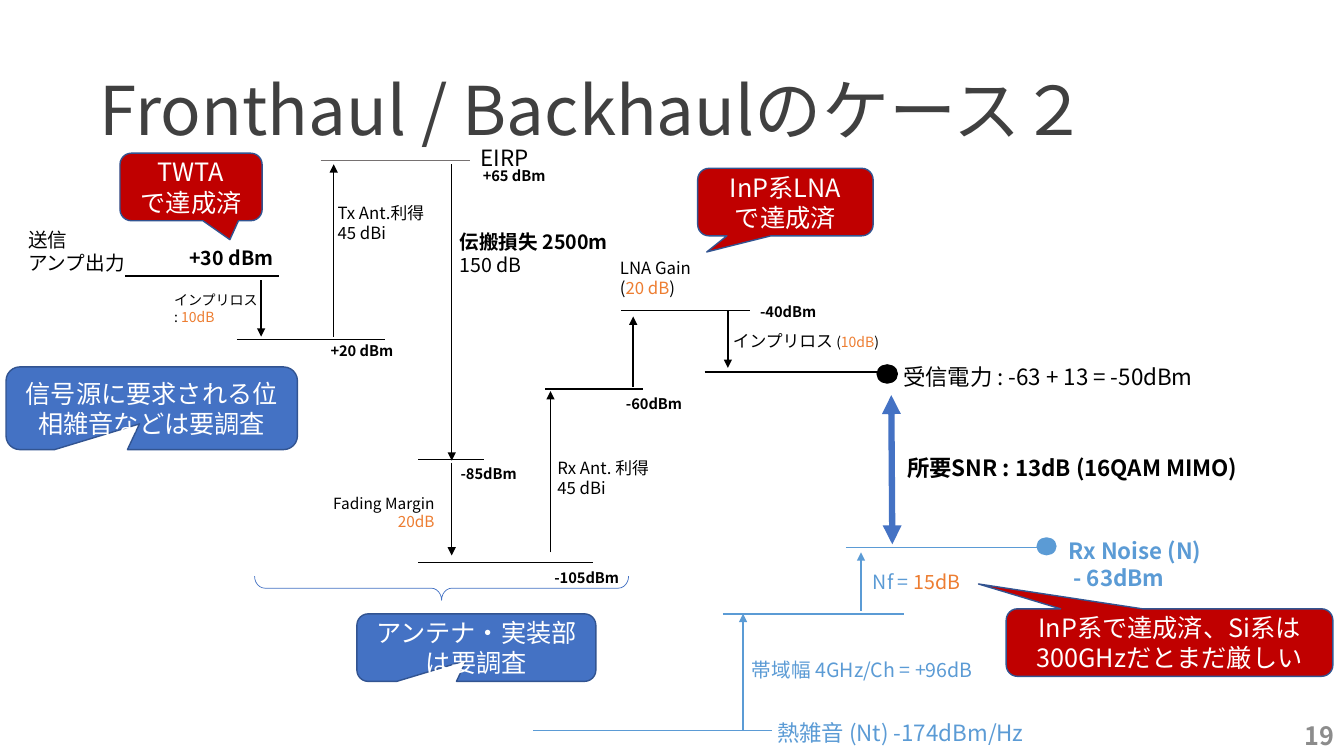
from dataclasses import dataclass
from lxml.etree import SubElement
from pptx import Presentation
from pptx.dml.color import RGBColor
from pptx.enum.shapes import MSO_CONNECTOR, MSO_SHAPE
from pptx.enum.text import MSO_ANCHOR, MSO_AUTO_SIZE, PP_ALIGN
from pptx.oxml.ns import qn
from pptx.util import Cm, Pt


@dataclass(frozen=True)
class Theme:
    font: str = "Noto Sans CJK JP"
    black: str = "000000"
    white: str = "FFFFFF"
    dark: str = "404040"
    grey: str = "767171"
    pale: str = "8C8C8C"
    red: str = "C00000"
    blue: str = "4472C4"
    edge: str = "325491"
    sky: str = "5B9BD5"
    orange: str = "ED7D31"
    title: float = 48
    large: float = 18
    main: float = 16
    body: float = 14
    note: float = 12
    fade: float = 11
    level: float = 10.5
    tiny: float = 10


T = Theme()


def cm(*vals):
    """Turn inches into lengths."""
    return [Cm(val * 2.54) for val in vals]


def rgb(code):
    return RGBColor.from_string(code)


def write(frame, paras, align=PP_ALIGN.LEFT, anchor=MSO_ANCHOR.TOP, space=None, **form):
    """Fill a frame; a paragraph is a string or a list of (text, format) runs."""
    frame.word_wrap = True
    frame.vertical_anchor = anchor
    for i, runs in enumerate(paras):
        para = frame.paragraphs[0] if i == 0 else frame.add_paragraph()
        para.alignment = align
        if space:
            para.line_spacing = space
        for text, extra in [(runs, {})] if isinstance(runs, str) else runs:
            look = {"size": T.body, "color": T.black, "bold": False, **form, **extra}
            run = para.add_run()
            run.text = text
            run.font.size = Pt(look["size"])
            run.font.bold = look["bold"]
            run.font.color.rgb = rgb(look["color"])
            run.font.name = T.font
            SubElement(run.font._element, qn("a:ea"), typeface=T.font)


class Board:
    """Holds the theme and the current slide."""

    def __init__(self, deck, theme):
        self.theme = theme
        self.slide = deck.slides.add_slide(deck.slide_layouts[5])

    def title(self, text, box):
        head = self.slide.shapes.title
        head.left, head.top, head.width, head.height = cm(*box)
        frame = head.text_frame
        frame.auto_size = MSO_AUTO_SIZE.NONE
        frame.margin_left, frame.margin_top, frame.margin_right, frame.margin_bottom = cm(
            0.07, 0, 0.07, 0)
        write(frame, [text], anchor=MSO_ANCHOR.MIDDLE, space=0.9,
              size=self.theme.title, color=self.theme.dark)

    def label(self, box, *paras, **form):
        area = self.slide.shapes.add_textbox(*cm(*box))
        write(area.text_frame, paras, **form)

    def line(self, x1, y1, x2, y2, color=T.black, width=1, ends=()):
        bar = self.slide.shapes.add_connector(
            MSO_CONNECTOR.STRAIGHT, *cm(x1, y1, x2, y2))
        bar.line.color.rgb = rgb(color)
        bar.line.width = Pt(width)
        props = bar._element.spPr
        for end in ends:
            SubElement(props.find(qn("a:ln")), qn("a:" + end), type="triangle")
        SubElement(props, qn("a:effectLst"))

    def arrow(self, x, start, stop, color=T.black):
        self.line(x, start, x, stop, color, ends=["tailEnd"])

    def shape(self, kind, box, fill=None, line=None, width=1, adjust=()):
        item = self.slide.shapes.add_shape(kind, *cm(*box))
        item.shadow.inherit = False
        if fill:
            item.fill.solid()
            item.fill.fore_color.rgb = rgb(fill)
        else:
            item.fill.background()
        if line:
            item.line.color.rgb = rgb(line)
            item.line.width = Pt(width)
        else:
            item.line.fill.background()
        for i, val in enumerate(adjust):
            item.adjustments[i] = val
        return item

    def callout(self, box, tip, fill, *paras):
        item = self.shape(MSO_SHAPE.ROUNDED_RECTANGULAR_CALLOUT, box, fill,
                          self.theme.edge, adjust=[*tip, 0.167])
        write(item.text_frame, paras, align=PP_ALIGN.CENTER, anchor=MSO_ANCHOR.MIDDLE,
              size=self.theme.large, color=self.theme.white)


def main():
    deck = Presentation()
    deck.slide_width, deck.slide_height = cm(13.33, 7.5)
    board = Board(deck, T)
    mark = {"color": T.orange}
    small = {"size": T.tiny}

    board.label((10.33, 7.1, 3, 0.4), "19", align=PP_ALIGN.RIGHT,
                anchor=MSO_ANCHOR.MIDDLE, size=T.large, color=T.pale, bold=True)
    board.title("Fronthaul / Backhaulのケース２", (0.92, 0.4, 11.5, 1.45))

    # Power levels: left, right, height, colour
    for left, right, y, color in [
        (1.24, 2.77, 2.74, T.black), (3.18, 4.66, 1.59, T.grey),
        (2.35, 3.82, 3.37, T.black), (4.15, 5.88, 5.58, T.black),
        (4.15, 4.8, 4.56, T.black), (5.41, 6.38, 3.86, T.black),
        (6.16, 7.44, 3.08, T.black), (6.99, 8.86, 3.69, T.black),
        (5.29, 7.66, 7.25, T.sky), (7.17, 8.97, 6.09, T.sky),
        (8.39, 10.36, 5.43, T.sky),
    ]:
        board.line(left, y, right, y, color)

    # Gains and losses: place, start, end, colour
    for step in [
        (3.31, 3.34, 1.63), (2.59, 2.78, 3.34), (4.48, 1.63, 4.57),
        (4.48, 4.59, 5.51), (5.46, 5.48, 3.88), (6.28, 3.84, 3.14),
        (7.22, 3.09, 3.65), (8.54, 6.06, 5.48, T.sky), (7.37, 7.25, 6.09, T.sky),
    ]:
        board.arrow(*step)
    board.line(8.84, 3.92, 8.85, 5.4, T.blue, 4.5, ["headEnd", "tailEnd"])

    board.shape(MSO_SHAPE.OVAL, (10.28, 5.33, 0.2, 0.18), T.sky)
    board.shape(MSO_SHAPE.OVAL, (8.7, 3.62, 0.2, 0.18), T.black, T.black)

    for x, y, text in [
        (7.44, 2.96, "-40dBm"), (6.11, 3.87, "-60dBm"), (5.4, 5.59, "-105dBm"),
        (4.47, 4.56, "-85dBm"), (4.69, 1.61, "+65 dBm"), (3.18, 3.34, "+20 dBm"),
    ]:
        board.label((x, y, 1.07, 0.29), text, size=T.level, bold=True)
    board.label((1.78, 2.39, 1.1, 0.34), "+30 dBm", bold=True)

    board.label((0.18, 2.21, 1.27, 0.57), "送信", "アンプ出力")
    board.label((4.67, 1.38, 2.43, 0.37), "EIRP", size=T.main)
    board.label((1.63, 2.84, 1.04, 0.44), "インプリロス",
                [(": ", {}), ("10dB", mark)], size=T.tiny)
    board.label((4.46, 2.23, 1.77, 0.81),
                [("伝搬損失 2500m", {"bold": True})], "150 dB")
    board.label((2.7, 4.85, 1.71, 0.47), "Fading Margin", [("20dB", mark)],
                align=PP_ALIGN.RIGHT, size=T.fade)
    board.label((3.25, 1.96, 1.1, 0.5), "Tx Ant.利得", "45 dBi", size=T.note)
    board.label((5.43, 4.49, 1.56, 0.5), "Rx Ant. 利得", "45 dBi", size=T.note)
    board.label((6.05, 2.51, 1.32, 0.5), "LNA Gain",
                [("(", {}), ("20 dB", mark), (")", {})], size=T.note)
    board.label((7.17, 3.23, 2.17, 0.3),
                [("インプリロス", {}), (" (", small), ("10dB", {**small, **mark}),
                 (")", small)], size=T.note)
    board.label((8.86, 3.55, 3.38, 0.37), "受信電力 : -63 + 13 = -50dBm", size=T.main)
    board.label((8.9, 4.46, 3.87, 0.37), "所要SNR : 13dB (16QAM MIMO)",
                size=T.main, bold=True)
    board.label((7.61, 7.09, 3.24, 0.37), "熱雑音 (Nt) -174dBm/Hz",
                size=T.main, color=T.sky)
    board.label((8.56, 5.61, 1.37, 0.34), [("Nf = ", {}), ("15dB", mark)], color=T.sky)
    board.label((7.36, 6.48, 2.57, 0.34), "帯域幅 4GHz/Ch = +96dB", color=T.sky)
    board.label((10.5, 5.28, 2.14, 0.64), "Rx Noise (N)", " - 63dBm",
                size=T.main, color=T.sky, bold=True)

    brace = board.shape(MSO_SHAPE.LEFT_BRACE, (4.26, 3.98, 0.24, 3.71),
                        line=T.blue, width=0.5, adjust=(0.427, 0.5))
    brace.rotation = 270

    board.callout((1.19, 1.52, 1.41, 0.67), (0.273, 0.78), T.red, "TWTA", "で達成済")
    board.callout((6.92, 1.67, 1.74, 0.67), (-0.448, 0.738), T.red, "InP系LNA", "で達成済")
    board.callout((3.54, 6.09, 2.37, 0.67), (-0.042, 0.189), T.blue,
                  "アンテナ・実装部は要調査")
    board.callout((9.98, 6.04, 3.24, 0.67), (-0.585, -0.868), T.red,
                  "InP系で達成済、Si系は300GHzだとまだ厳しい")
    board.callout((0.06, 3.64, 2.89, 0.82), (-0.042, 0.189), T.blue,
                  "信号源に要求される位相雑音などは要調査")

    deck.save("out.pptx")


if __name__ == "__main__":
    main()
